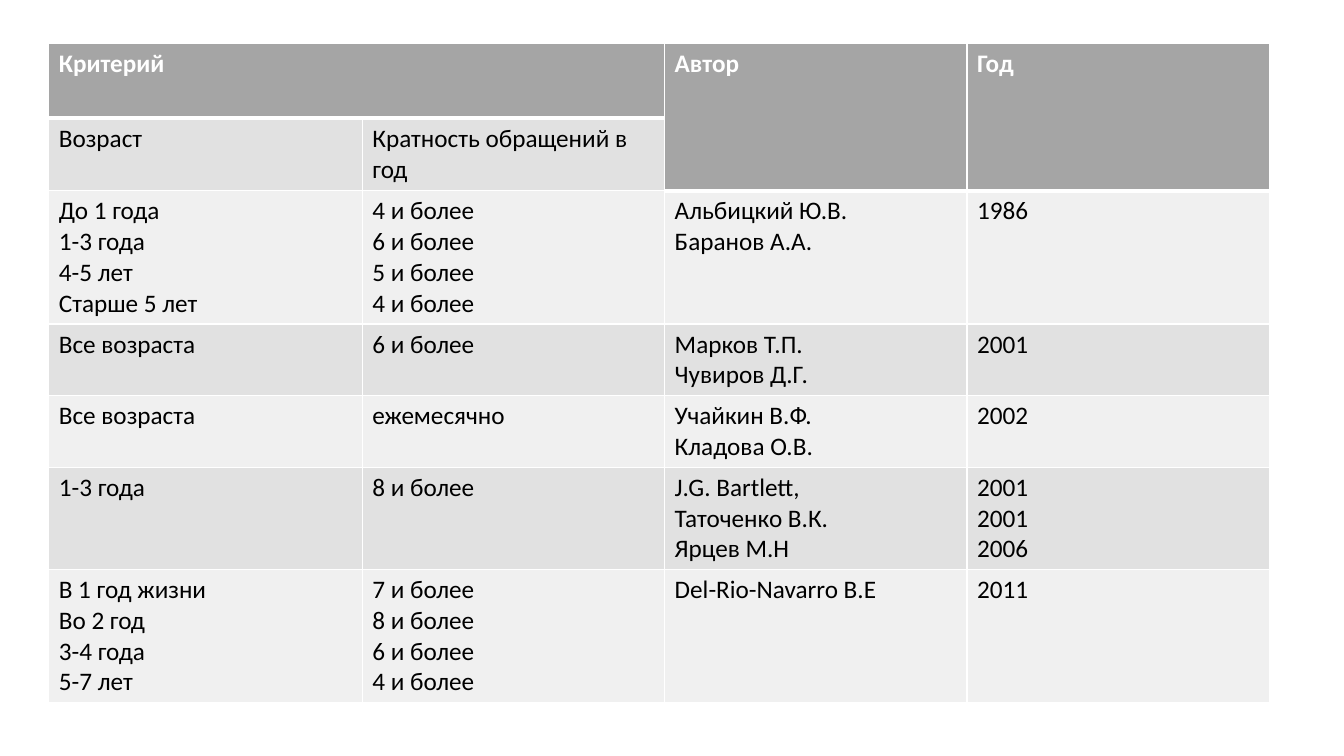
from pptx import Presentation
from pptx.dml.color import RGBColor as RGB
from pptx.oxml import parse_xml
from pptx.oxml.ns import nsdecls
from pptx.util import Cm, Pt

COLORS = {"header": "A5A5A5", "dark": "E1E1E1", "light": "F0F0F0",
          "white": "FFFFFF", "black": "000000"}
COL_WIDTHS = [7.9, 7.62, 7.62, 7.62]
ROW_HEIGHTS = [1.88, 1.83, 1.42, 1.42, 1.42, 1.57, 1.42]
ROWS = [
    ["Критерий", "", "Автор", "Год"],
    ["Возраст", "Кратность обращений в год", "", ""],
    ["До 1 года\n1-3 года\n4-5 лет\nСтарше 5 лет",
     "4 и более\n6 и более\n5 и более\n4 и более",
     "Альбицкий Ю.В.\vБаранов А.А.", "1986"],
    ["Все возраста", "6 и более", "Марков Т.П.\vЧувиров Д.Г.", "2001"],
    ["Все возраста", "ежемесячно", "Учайкин В.Ф.\vКладова О.В.", "2002"],
    ["1-3 года", "8 и более",
     "J.G. Bartlett,\nТаточенко В.К.\nЯрцев М.Н", "2001\n2001\n2006"],
    ["В 1 год жизни\nВо 2 год\n3-4 года\n5-7 лет",
     "7 и более\n8 и более\n6 и более\n4 и более",
     "Del-Rio-Navarro B.E", "2011"],
]


def add_border(cell, side, width):
    cell._tc.get_or_add_tcPr().append(parse_xml(
        f'<a:ln{side} {nsdecls("a")} w="{Pt(width)}"><a:solidFill>'
        f'<a:srgbClr val="{COLORS["white"]}"/></a:solidFill></a:ln{side}>'))


prs = Presentation()
prs.slide_width, prs.slide_height = Cm(33.87), Cm(19.05)
s = prs.slides.add_slide(prs.slide_layouts[6])

frame = s.shapes.add_table(len(ROWS), len(COL_WIDTHS),
                           Cm(1.23), Cm(1.1), Cm(30.78), Cm(16.4))
table = frame.table
for col, width in zip(table.columns, COL_WIDTHS):
    col.width = Cm(width)
for row, height in zip(table.rows, ROW_HEIGHTS):
    row.height = Cm(height)
frame.height = Cm(16.4)

for i, texts in enumerate(ROWS):
    for j, text in enumerate(texts):
        cell = table.cell(i, j)
        header = i == 0 or (i == 1 and j > 1)
        fill = "header" if header else "dark" if i % 2 else "light"
        font = {"name": "Calibri", "size": Pt(18), "bold": header}
        borders = {"L": 1, "R": 1, "T": 1, "B": 3 if header else 1}
        if i:
            del borders["T"]
        for side, width in borders.items():
            add_border(cell, side, width)
        cell.fill.solid()
        cell.fill.fore_color.rgb = RGB.from_string(COLORS[fill])
        cell.text = text
        for p in cell.text_frame.paragraphs:
            for r in p.runs:
                for key, value in font.items():
                    setattr(r.font, key, value)
                r.font.color.rgb = RGB.from_string(
                    COLORS["white" if header else "black"])

table.cell(0, 0).merge(table.cell(0, 1))
for j in (2, 3):
    table.cell(0, j).merge(table.cell(1, j))

prs.save("out.pptx")
